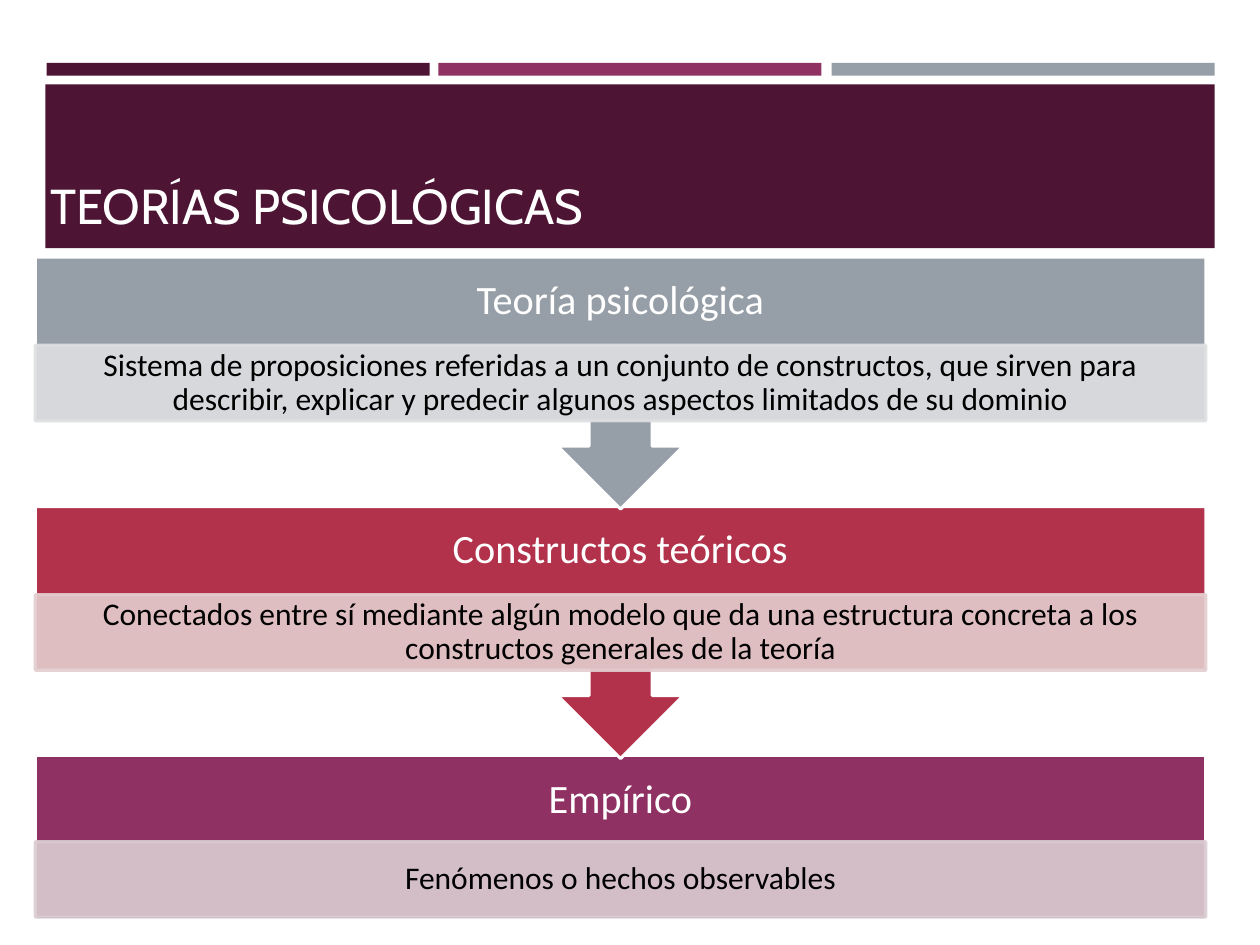
from lxml import etree
from pptx import Presentation
from pptx.dml.color import RGBColor
from pptx.enum.shapes import MSO_SHAPE
from pptx.enum.text import MSO_ANCHOR, PP_ALIGN
from pptx.oxml.ns import qn
from pptx.util import Inches, Pt

RECT = MSO_SHAPE.RECTANGLE
CALLOUT = MSO_SHAPE.UP_ARROW_CALLOUT
LEFT, CENTER = PP_ALIGN.LEFT, PP_ALIGN.CENTER
MIDDLE, BOTTOM = MSO_ANCHOR.MIDDLE, MSO_ANCHOR.BOTTOM

PLUM, PURPLE, GRAY, RED = "4D1434", "903163", "969FA7", "B2324B"
WHITE, BLACK = "FFFFFF", "000000"
BLOCK_X, BLOCK_W = 0.28, 9.29
FIRST_Y, STEP = 2.04, 1.98
HEADER_H, DETAIL_H = 0.7, 0.6

BARS = [(0.37, PLUM), (3.48, PURPLE), (6.6, GRAY)]
LEVELS = [
    ("Teoría psicológica",
     "Sistema de proposiciones referidas a un conjunto de constructos, que sirven para "
     "describir, explicar y predecir algunos aspectos limitados de su dominio",
     GRAY, "DDDFE1"),
    ("Constructos teóricos",
     "Conectados entre sí mediante algún modelo que da una estructura concreta a los "
     "constructos generales de la teoría",
     RED, "E4CED0"),
    ("Empírico", "Fenómenos o hechos observables", PURPLE, "DBCED3"),
]


def paint(color_format, color, alpha=None):
    """Set a solid colour, with an optional opacity in percent."""
    color_format.rgb = RGBColor.from_string(color)
    if alpha is not None:
        for clr in color_format._xFill.iter(qn("a:srgbClr")):
            etree.SubElement(clr, qn("a:alpha"), val=str(alpha * 1000))


def add_box(slide, kind, x, y, w, h, fill, line=None, alpha=None):
    """Add a filled preset shape without shadow."""
    s = slide.shapes.add_shape(kind, Inches(x), Inches(y), Inches(w), Inches(h))
    s.shadow.inherit = False
    s.fill.solid()
    paint(s.fill.fore_color, fill)
    if line:
        s.line.width = Pt(1.75)
        s.line.fill.solid()
        paint(s.line.fill.fore_color, line)
    else:
        s.line.fill.background()
    if alpha is not None:
        for clr in s._element.spPr.iter(qn("a:srgbClr")):
            etree.SubElement(clr, qn("a:alpha"), val=str(alpha * 1000))
    return s


def write(s, text, size, color, font="Calibri", align=CENTER, anchor=MIDDLE,
          margins=(0.1, 0.05), spacing=0.9):
    """Write one formatted paragraph into a shape."""
    tf = s.text_frame
    tf.word_wrap = True
    tf.vertical_anchor = anchor
    tf.margin_left = tf.margin_right = Inches(margins[0])
    tf.margin_top = tf.margin_bottom = Inches(margins[1])
    p = tf.paragraphs[0]
    p.alignment = align
    p.line_spacing = spacing
    r = p.add_run()
    r.text = text
    r.font.size = Pt(size)
    r.font.name = font
    r.font.color.rgb = RGBColor.from_string(color)


def add_text(slide, x, y, w, h, text, size, color, **style):
    """Add a text box with one paragraph."""
    s = slide.shapes.add_textbox(Inches(x), Inches(y), Inches(w), Inches(h))
    write(s, text, size, color, **style)


def add_banner(slide, title):
    """Add the three top bars and the title band."""
    for x, color in BARS:
        add_box(slide, RECT, x, 0.5, 3.04, 0.1, color)
    add_box(slide, RECT, 0.36, 0.67, 9.28, 1.3, PLUM)
    add_text(slide, 0.3, 0.74, 9.4, 1.17, title, 28, WHITE, font="Cabin",
             align=LEFT, anchor=BOTTOM, spacing=1.0)


def add_level(slide, y, header, detail, color, tint, last):
    """Add one level of the process, with a down arrow unless it is the last."""
    kind, height = (RECT, 1.3) if last else (CALLOUT, 2)
    s = add_box(slide, kind, BLOCK_X, y, BLOCK_W, height, color, line=WHITE)
    s.rotation = 0 if last else 180
    add_text(slide, BLOCK_X, y, BLOCK_W, HEADER_H, header, 23, WHITE,
             margins=(0.18, 0.18))
    detail_y = y + (0.68 if last else HEADER_H)
    s = add_box(slide, RECT, BLOCK_X, detail_y, BLOCK_W, DETAIL_H, tint,
                line=tint, alpha=90)
    write(s, detail, 18, BLACK, margins=(0.14, 0.03))


def main():
    """Build the slide and save it."""
    prs = Presentation()
    prs.slide_width, prs.slide_height = Inches(10), Inches(7.5)
    slide = prs.slides.add_slide(prs.slide_layouts[6])
    add_banner(slide, "TEORÍAS PSICOLÓGICAS")
    last = len(LEVELS) - 1
    for i in range(last, -1, -1):
        add_level(slide, FIRST_Y + i * STEP, *LEVELS[i], last=i == last)
    prs.save("out.pptx")


if __name__ == "__main__":
    main()
